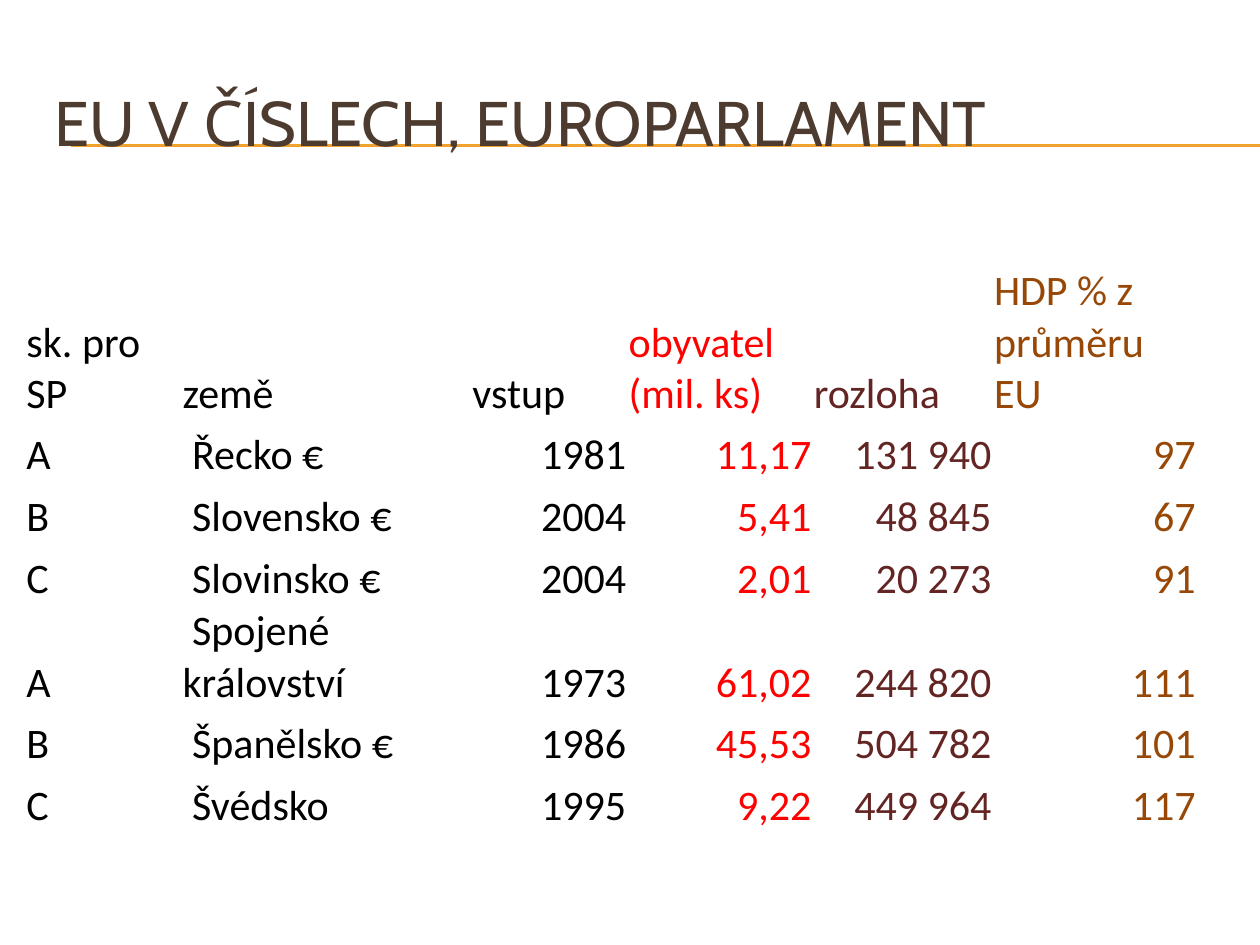
import pptx
import pptx.dml.color
import pptx.enum.shapes
import pptx.enum.text
import pptx.oxml.ns
import pptx.util
from lxml import etree
from pptx.util import Inches

COLORS = {
    "title": "4E3B30",
    "rule": "F0A22E",
    "text": "000000",
    "population": "FF0000",
    "area": "632523",
    "gdp": "974807",
}
ANCHOR = pptx.enum.text.MSO_ANCHOR
ALIGN = pptx.enum.text.PP_ALIGN

# Heading, width, colour and alignment of the body cells
COLUMNS = [
    ("sk. pro SP", 1.24, "text", ALIGN.LEFT),
    ("země", 2.3, "text", ALIGN.LEFT),
    ("vstup", 1.24, "text", ALIGN.RIGHT),
    ("obyvatel (mil. ks)", 1.47, "population", ALIGN.RIGHT),
    ("rozloha", 1.43, "area", ALIGN.RIGHT),
    ("HDP % z průměru EU", 1.62, "gdp", ALIGN.RIGHT),
]
COUNTRIES = [
    ("A", " Řecko €", "1981", "11,17", "131 940", "97"),
    ("B", " Slovensko €", "2004", "5,41", "48 845", "67"),
    ("C", " Slovinsko €", "2004", "2,01", "20 273", "91"),
    ("A", " Spojené království", "1973", "61,02", "244 820", "111"),
    ("B", " Španělsko €", "1986", "45,53", "504 782", "101"),
    ("C", " Švédsko", "1995", "9,22", "449 964", "117"),
]
ROW_HEIGHTS = [1.21, 0.49, 0.49, 0.49, 0.81, 0.49, 0.49]
CELL_FORMAT = {
    "vertical_anchor": ANCHOR.BOTTOM,
    "margin_left": Inches(0.01),
    "margin_right": Inches(0.01),
    "margin_top": Inches(0.01),
    "margin_bottom": 0,
}


def apply_format(target, values):
    for name, value in values.items():
        setattr(target, name, value)


def rgb(name):
    return pptx.dml.color.RGBColor.from_string(COLORS[name])


def write_text(frame, text, font, size, color, align):
    para = frame.paragraphs[0]
    para.alignment = align
    span = para.add_run()
    span.text = text
    apply_format(span.font, {"name": font, "size": pptx.util.Pt(size), "bold": False})
    span.font.color.rgb = rgb(color)


def add_rules(page, left, right, tops):
    for top in tops:
        rule = page.shapes.add_connector(
            pptx.enum.shapes.MSO_CONNECTOR.STRAIGHT,
            Inches(left), Inches(top), Inches(right), Inches(top))
        rule.line.color.rgb = rgb("rule")
        rule.line.width = pptx.util.Pt(0.75)
        etree.SubElement(rule._element.spPr, pptx.oxml.ns.qn("a:effectLst"))


def place_title(page, left, top, width, height):
    title = page.shapes.title
    apply_format(title, {"left": Inches(left), "top": Inches(top),
                         "width": Inches(width), "height": Inches(height)})
    apply_format(title.text_frame, {"vertical_anchor": ANCHOR.MIDDLE, "word_wrap": True})
    write_text(title.text_frame, "EU V ČÍSLECH, EUROPARLAMENT", "Cabin", 36,
               "title", ALIGN.LEFT)
    # Bring the title in front of the rules
    title._element.getparent().append(title._element)


def add_country_table(page, left, top, width, height):
    table = page.shapes.add_table(
        len(ROW_HEIGHTS), len(COLUMNS),
        Inches(left), Inches(top), Inches(width), Inches(height)).table
    apply_format(table, {"first_row": False, "horz_banding": False})
    for row, row_height in zip(table.rows, ROW_HEIGHTS):
        row.height = Inches(row_height)

    for col, (heading, col_width, color, body_align) in enumerate(COLUMNS):
        table.columns[col].width = Inches(col_width)
        texts = [heading] + [country[col] for country in COUNTRIES]
        for row, text in enumerate(texts):
            cell = table.cell(row, col)
            cell.fill.background()
            apply_format(cell, CELL_FORMAT)
            align = body_align if row else ALIGN.LEFT
            write_text(cell.text_frame, text, "Calibri", 24, color, align)


def main():
    deck = pptx.Presentation()
    apply_format(deck, {"slide_width": Inches(10), "slide_height": Inches(7.5)})
    page = deck.slides.add_slide(deck.slide_layouts.get_by_name("Title Only"))
    add_rules(page, 0.56, 10, (1.15, 1.16))
    place_title(page, 0.33, 0.5, 9.5, 0.92)
    add_country_table(page, 0.2, 2.1, 9.29, 4.48)
    deck.save("out.pptx")


if __name__ == "__main__":
    main()
